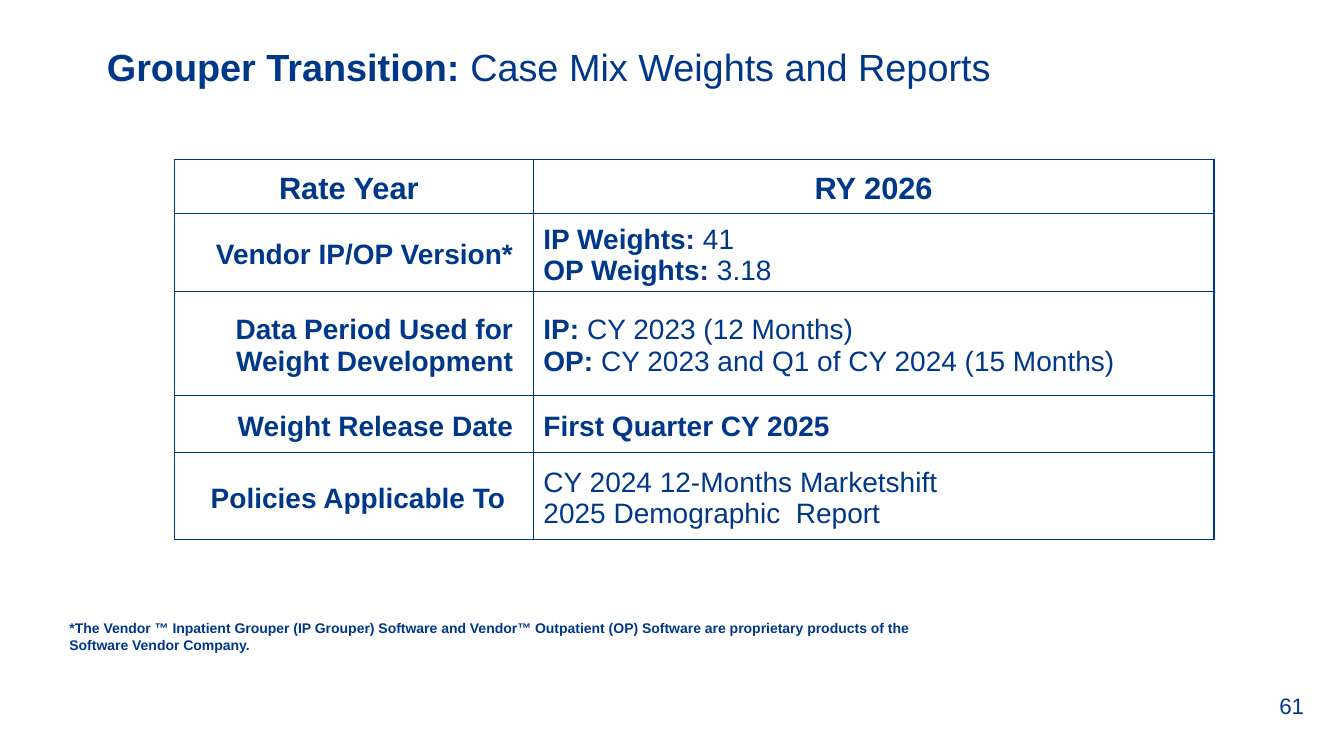
"""Build the slide on case mix weights and reports for the grouper transition."""
from lxml.etree import SubElement
from pptx import Presentation
from pptx.dml.color import RGBColor
from pptx.enum.text import MSO_ANCHOR as ANCHOR, MSO_AUTO_SIZE as AUTOSIZE, PP_ALIGN as ALIGN
from pptx.oxml.ns import qn
from pptx.util import Inches, Pt

COLORS = {"navy": "003889", "white": "FFFFFF"}
FONT = "Arial"
COLUMN_WIDTHS = [3.56, 6.75]
ROW_HEIGHTS = [0.54, 0.7, 1.03, 0.57, 0.86]
HEADINGS = ["Rate Year", "RY 2026"]
RATE_YEAR_ROWS = [
    ("Vendor IP/OP Version*", [("IP Weights:", " 41"), ("OP Weights:", " 3.18")]),
    ("Data Period Used for Weight Development",
     [("IP: ", "CY 2023 (12 Months)"),
      ("OP:", " CY 2023 and Q1 of CY 2024 (15 Months)")]),
    ("Weight Release Date", [("First Quarter CY 2025", "")]),
    ("Policies Applicable To ",
     [("", "CY 2024 12-Months Marketshift"), ("", "2025 Demographic  Report")]),
]
FOOTNOTE = ("*The Vendor ™ Inpatient Grouper (IP Grouper) Software and Vendor™ Outpatient (OP) "
            "Software are proprietary products of the Software Vendor Company.")


def write_text(frame, lines, size, align=ALIGN.LEFT):
    """Write lines, each a pair of a bold part and a regular part."""
    for index, parts in enumerate(lines):
        paragraph = frame.paragraphs[0] if index == 0 else frame.add_paragraph()
        paragraph.alignment = align
        for part, bold in zip(parts, (True, False)):
            if part:
                run = paragraph.add_run()
                run.text = part
                run.font.name = FONT
                run.font.size = Pt(size)
                run.font.bold = bold
                run.font.color.rgb = RGBColor.from_string(COLORS["navy"])


def set_frame(frame, top=0.05, bottom=0.05, anchor=ANCHOR.TOP):
    """Set wrapping, insets and anchor of a text frame."""
    frame.word_wrap = True
    frame.auto_size = AUTOSIZE.NONE
    frame.margin_left = frame.margin_right = Inches(0.1)
    frame.margin_top, frame.margin_bottom = Inches(top), Inches(bottom)
    frame.vertical_anchor = anchor


def add_title(slide, lines):
    """Place and fill the title placeholder."""
    title = slide.shapes.title
    title.left, title.top = Inches(0.96), Inches(0.38)
    title.width, title.height = Inches(11.6), Inches(0.66)
    set_frame(title.text_frame)
    write_text(title.text_frame, lines, size=27)


def add_label(slide, box, parts, size, **frame_format):
    """Add a text box with one paragraph."""
    label = slide.shapes.add_textbox(*map(Inches, box))
    set_frame(label.text_frame, **frame_format)
    write_text(label.text_frame, [parts], size)


def add_borders(cell):
    """Draw a thin navy line on all four sides of a cell."""
    properties = cell._tc.get_or_add_tcPr()
    for index, side in enumerate(("a:lnL", "a:lnR", "a:lnT", "a:lnB")):
        line = properties.makeelement(qn(side), {"w": str(Pt(1))})
        properties.insert(index, line)
        fill = SubElement(line, qn("a:solidFill"))
        SubElement(fill, qn("a:srgbClr"), val=COLORS["navy"])


def fill_cell(cell, lines, size, align, right=0.1):
    """Write and format one table cell."""
    cell.fill.solid()
    cell.fill.fore_color.rgb = RGBColor.from_string(COLORS["white"])
    cell.vertical_anchor = ANCHOR.MIDDLE
    cell.margin_left, cell.margin_right = Inches(0.1), Inches(right)
    cell.margin_top, cell.margin_bottom = Inches(0.1), Inches(0.05)
    write_text(cell.text_frame, lines, size, align)
    add_borders(cell)


def add_rate_year_table(slide):
    """Add the table of versions, periods, dates and policies."""
    table = slide.shapes.add_table(
        len(ROW_HEIGHTS), len(COLUMN_WIDTHS), Inches(1.73), Inches(1.58),
        Inches(sum(COLUMN_WIDTHS)), Inches(sum(ROW_HEIGHTS))).table
    for column, width in zip(table.columns, COLUMN_WIDTHS):
        column.width = Inches(width)
    for row, height in zip(table.rows, ROW_HEIGHTS):
        row.height = Inches(height)
    for column, (heading, right) in enumerate(zip(HEADINGS, (0.2, 0.1))):
        fill_cell(table.cell(0, column), [(heading, "")], 22, ALIGN.CENTER, right)
    for row, (topic, details) in enumerate(RATE_YEAR_ROWS, start=1):
        fill_cell(table.cell(row, 0), [(topic, "")], 20, ALIGN.RIGHT, right=0.2)
        fill_cell(table.cell(row, 1), details, 20, ALIGN.LEFT)


def main():
    """Build and save the slide."""
    deck = Presentation()
    deck.slide_width, deck.slide_height = Inches(13.33), Inches(7.5)
    slide = deck.slides.add_slide(deck.slide_layouts.get_by_name("Title Only"))
    add_title(slide, [("Grouper Transition: ", "Case Mix Weights and Reports")])
    add_rate_year_table(slide)
    add_label(slide, (0.59, 6.05, 8.98, 0.54), (FOOTNOTE, ""), 10, top=0.1, bottom=0.1)
    add_label(slide, (12.59, 6.8, 0.63, 0.4), ("", "61"), 16, anchor=ANCHOR.MIDDLE)
    deck.save("out.pptx")


if __name__ == "__main__":
    main()
